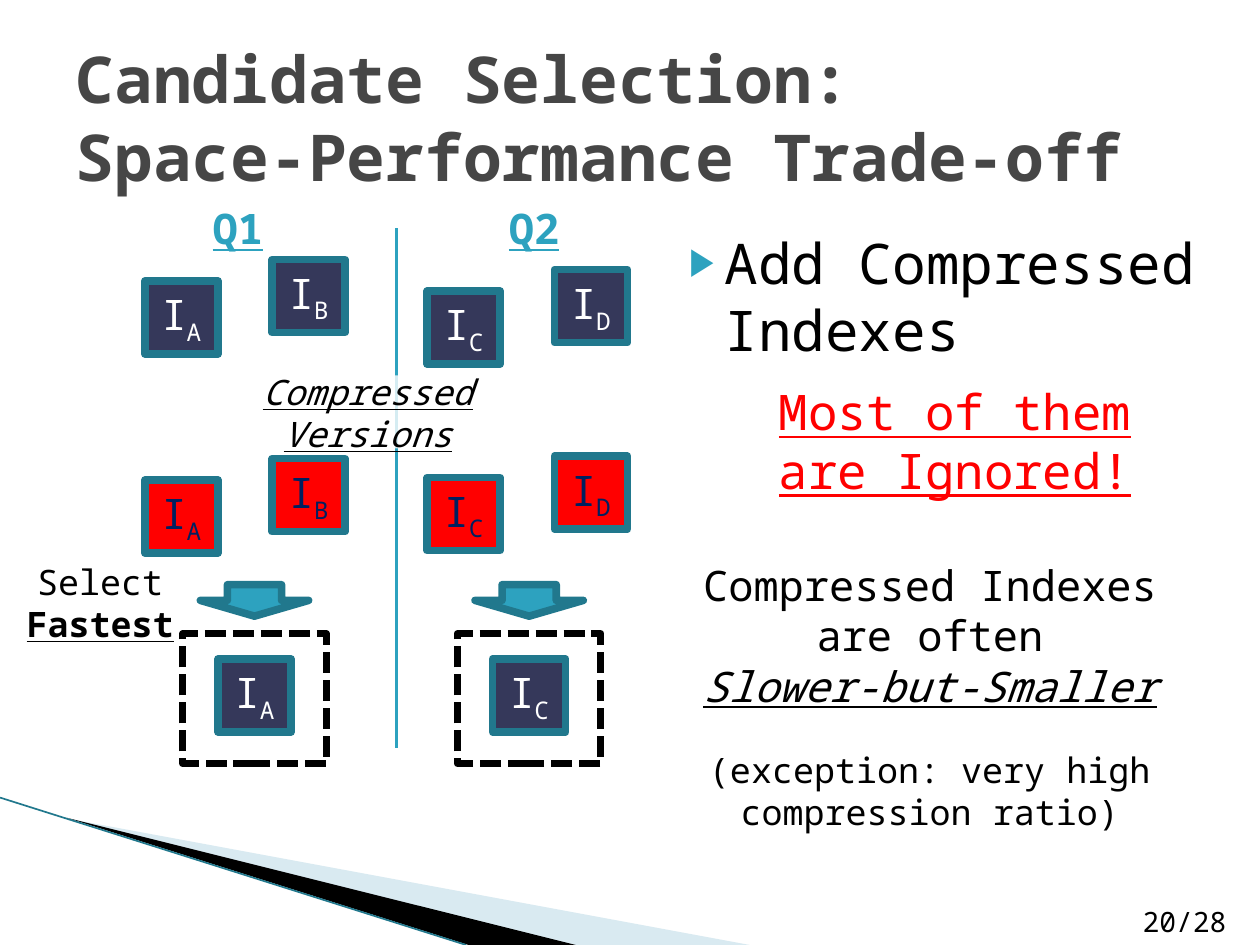
from pptx import Presentation
from pptx.dml.color import RGBColor
from pptx.enum.dml import MSO_LINE
from pptx.enum.shapes import MSO_CONNECTOR, MSO_SHAPE
from pptx.enum.text import MSO_ANCHOR, MSO_AUTO_SIZE, PP_ALIGN
from pptx.oxml.ns import qn
from pptx.util import Inches, Pt
from lxml.etree import SubElement

FONT = "Noto Sans Mono"
BLACK = RGBColor(0x00, 0x00, 0x00)
WHITE = RGBColor(0xFF, 0xFF, 0xFF)
RED = RGBColor(0xFF, 0x00, 0x00)
NAVY = RGBColor(0x00, 0x20, 0x60)
INDIGO = RGBColor(0x35, 0x38, 0x5A)
TEAL = RGBColor(0x2D, 0xA2, 0xBF)
DARK_TEAL = RGBColor(0x21, 0x78, 0x8D)
PALE_BLUE = RGBColor(0xA0, 0xCB, 0xDC)
GRAY = RGBColor(0x46, 0x46, 0x46)

INDEX_SIZE = 0.58
PAIR_STEP = (1.01, -0.17)


def style_paragraph(paragraph, size, color, align=PP_ALIGN.CENTER,
                    bold=False, italic=False, underline=False):
    paragraph.alignment = align
    font = paragraph.font
    font.name = FONT
    font.size = Pt(size)
    font.color.rgb = color
    font.bold = bold
    font.italic = italic
    font.underline = underline


def set_alpha(shape, percent):
    color = shape.fill._xPr.find(qn("a:solidFill"))[0]
    SubElement(color, qn("a:alpha")).set("val", str(percent * 1000))


def place(shape, left, top, width, height):
    shape.left, shape.top = Inches(left), Inches(top)
    shape.width, shape.height = Inches(width), Inches(height)


def add_text(slide, left, top, width, height, lines, size, color=BLACK,
             anchor=MSO_ANCHOR.TOP, **style):
    """Add one paragraph per (text, extra style) pair in lines."""
    box = slide.shapes.add_textbox(Inches(left), Inches(top), Inches(width), Inches(height))
    frame = box.text_frame
    frame.word_wrap = True
    frame.vertical_anchor = anchor
    for number, (text, extra) in enumerate(lines):
        paragraph = frame.add_paragraph() if number else frame.paragraphs[0]
        paragraph.text = text
        style_paragraph(paragraph, size, color, **{**style, **extra})


def add_preset(slide, preset, left, top, width, height, fill=None,
               line=None, line_width=4.33):
    shape = slide.shapes.add_shape(
        preset, Inches(left), Inches(top), Inches(width), Inches(height))
    shape.shadow.inherit = False
    if fill is None:
        shape.fill.background()
    else:
        shape.fill.solid()
        shape.fill.fore_color.rgb = fill
    if line is None:
        shape.line.fill.background()
    else:
        shape.line.color.rgb = line
        shape.line.width = Pt(line_width)
    return shape


def add_index(slide, left, top, letter, fill=INDIGO, color=WHITE):
    shape = add_preset(slide, MSO_SHAPE.RECTANGLE, left, top,
                       INDEX_SIZE, INDEX_SIZE, fill, DARK_TEAL)
    frame = shape.text_frame
    frame.margin_left = frame.margin_right = Inches(0.05)
    frame.vertical_anchor = MSO_ANCHOR.MIDDLE
    paragraph = frame.paragraphs[0]
    paragraph.add_run().text = "I"
    subscript = paragraph.add_run()
    subscript.text = letter
    subscript.font._element.set("baseline", "-25000")
    style_paragraph(paragraph, 24, color)


def add_index_pair(slide, left, top, letters, **colors):
    for number, letter in enumerate(letters):
        add_index(slide, left + number * PAIR_STEP[0], top + number * PAIR_STEP[1],
                  letter, **colors)


def add_query(slide, name, label_left, pair_left, tops, letters, center):
    """Draw a query's plain and compressed indexes and the one selected."""
    add_text(slide, label_left, 1.56, 0.73, 0.5, [(name, {})], 24, TEAL,
             align=PP_ALIGN.LEFT, bold=True, underline=True)
    plain_top, compressed_top = tops
    add_index_pair(slide, pair_left, plain_top, letters)
    add_index_pair(slide, pair_left, compressed_top, letters, fill=RED, color=NAVY)
    add_preset(slide, MSO_SHAPE.DOWN_ARROW, center - 0.43, 4.64, 0.86, 0.25, TEAL, DARK_TEAL)
    add_index(slide, center - INDEX_SIZE / 2, 5.23, letters[0])
    frame = add_preset(slide, MSO_SHAPE.RECTANGLE, center - 0.57, 5.03, 1.14, 1.03,
                       line=BLACK, line_width=4)
    frame.line.dash_style = MSO_LINE.SQUARE_DOT
    frame.line._ln.find(qn("a:prstDash")).set("val", "sysDash")


def add_line(slide, start, end, color, width):
    line = slide.shapes.add_connector(
        MSO_CONNECTOR.STRAIGHT, *(Inches(value) for value in start + end))
    line.line.color.rgb = color
    line.line.width = Pt(width)
    SubElement(line._element.spPr, qn("a:effectLst"))


def add_wedge(slide, points, fill):
    corners = [(Inches(x), Inches(y)) for x, y in points]
    builder = slide.shapes.build_freeform(*corners[0])
    builder.add_line_segments(corners[1:])
    wedge = builder.convert_to_shape()
    wedge.shadow.inherit = False
    wedge.fill.solid()
    wedge.fill.fore_color.rgb = fill
    wedge.line.fill.background()
    return wedge


def add_corner_decoration(slide):
    pale = add_wedge(slide, [(0.55, 6.5), (5.95, 7.5), (4.56, 7.5)], PALE_BLUE)
    set_alpha(pale, 40)
    add_wedge(slide, [(0.53, 6.49), (4.57, 7.5), (3.72, 7.5)], BLACK)
    add_line(slide, (0, 6.33), (3.7, 7.5), DARK_TEAL, 0.95)


def fill_title(slide):
    title = slide.shapes.title
    place(title, 0.5, 0.3, 9, 1.25)
    frame = title.text_frame
    frame.auto_size = MSO_AUTO_SIZE.NONE
    frame.vertical_anchor = MSO_ANCHOR.MIDDLE
    paragraph = frame.paragraphs[0]
    paragraph.text = "Candidate Selection:\nSpace-Performance Trade-off"
    style_paragraph(paragraph, 36.9, GRAY, PP_ALIGN.LEFT, bold=True)


def fill_body(slide):
    body = slide.placeholders[1]
    place(body, 5.25, 1.76, 4.75, 1.38)
    body.text_frame.auto_size = MSO_AUTO_SIZE.NONE
    paragraph = body.text_frame.paragraphs[0]
    paragraph.text = "Add Compressed\nIndexes"
    paragraph.space_before = Pt(0)
    properties = paragraph._p.get_or_add_pPr()
    properties.set("marL", str(Inches(0.4)))
    properties.set("indent", str(Inches(-0.28)))
    bullet_color = SubElement(properties, qn("a:buClr"))
    SubElement(bullet_color, qn("a:srgbClr")).set("val", str(TEAL))
    SubElement(properties, qn("a:buSzPct")).set("val", "68000")
    SubElement(properties, qn("a:buChar")).set("char", "▶")
    style_paragraph(paragraph, 32, BLACK, PP_ALIGN.LEFT)


def add_compressed_label(slide):
    label = add_preset(slide, MSO_SHAPE.RECTANGLE, 1.28, 2.98, 3.28, 0.58, WHITE)
    set_alpha(label, 80)
    label.text_frame.vertical_anchor = MSO_ANCHOR.MIDDLE
    paragraph = label.text_frame.paragraphs[0]
    paragraph.text = "Compressed Versions"
    style_paragraph(paragraph, 20, BLACK, italic=True, underline=True)


def add_remarks(slide):
    add_text(slide, 0, 4.28, 1.59, 1,
             [("Select", {}), ("Fastest", {"bold": True, "underline": True})],
             20, anchor=MSO_ANCHOR.MIDDLE)
    add_text(slide, 6.08, 2.98, 3, 1.04,
             [("Most of them", {}), ("are Ignored!", {})], 28, RED, underline=True)
    add_text(slide, 5.42, 4.39, 3.92, 1.31,
             [("Compressed Indexes", {}), ("are often", {}),
              ("Slower-but-Smaller", {"italic": True, "underline": True})], 24)
    add_text(slide, 5.42, 5.89, 3.92, 0.77,
             [("(exception: very high\ncompression ratio)", {})], 20)
    add_text(slide, 8.97, 7.13, 1, 0.37, [("20/28", {})], 16, align=PP_ALIGN.LEFT)


def main():
    presentation = Presentation()
    presentation.slide_width, presentation.slide_height = Inches(10), Inches(7.5)
    slide = presentation.slides.add_slide(presentation.slide_layouts[1])
    add_corner_decoration(slide)
    fill_title(slide)
    fill_body(slide)
    add_line(slide, (3.15, 1.81), (3.15, 5.94), TEAL, 1.75)
    add_query(slide, "Q1", 1.59, 1.15, (2.23, 3.81), "AB", 2.02)
    add_query(slide, "Q2", 3.94, 3.39, (2.31, 3.79), "CD", 4.2)
    add_compressed_label(slide)
    add_remarks(slide)
    presentation.save("out.pptx")


if __name__ == "__main__":
    main()
